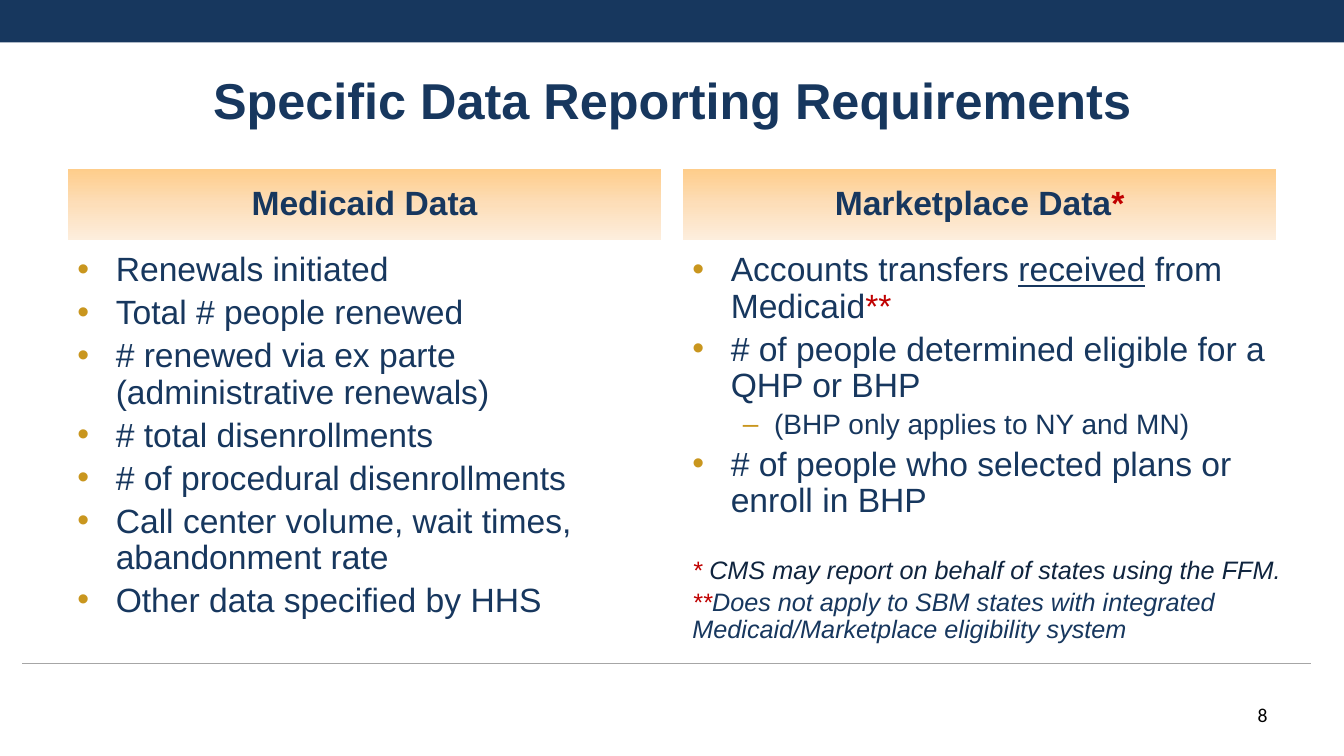
from copy import deepcopy

from lxml.etree import SubElement
from pptx import Presentation
from pptx.dml.color import RGBColor
from pptx.enum.shapes import MSO_CONNECTOR, MSO_SHAPE
from pptx.enum.text import MSO_ANCHOR, MSO_AUTO_SIZE, PP_ALIGN
from pptx.oxml.ns import qn
from pptx.util import Inches, Pt

NAVY, INK, RED, GOLD = "17375E", "0F243E", "C00000", "C9961E"
HEADER_STOPS = [(0, "FECD8B"), (0.5, "FDDEB9"), (1, "FDEEDD")]
# Per level: bullet character, left margin, hanging indent, text size
LEVELS = [("•", 0.38, 0.38, 24), ("–", 0.81, 0.31, 20)]


def rgb(value):
    return RGBColor.from_string(value)


class SlideBuilder:
    def __init__(self, slide, font="Arial"):
        self.slide = slide
        self.font = font

    def frame(self, sp, anchor=MSO_ANCHOR.TOP):
        tf = sp.text_frame
        tf.word_wrap = True
        tf.auto_size = MSO_AUTO_SIZE.NONE
        tf.vertical_anchor = anchor
        return tf

    def runs(self, p, parts, size, font=None, color=NAVY, **style):
        """Add runs; a part is plain text or (text, overrides)."""
        for part in parts:
            text, extra = (part, {}) if isinstance(part, str) else part
            look = {"color": color, **style, **extra}
            r = p.add_run()
            r.text = text
            r.font.name = font or self.font
            r.font.size = Pt(size)
            r.font.color.rgb = rgb(look.pop("color"))
            for name, value in look.items():
                setattr(r.font, name, value)

    def title(self, text, *box):
        sp = self.slide.shapes.title
        sp.left, sp.top, sp.width, sp.height = map(Inches, box)
        p = self.frame(sp, MSO_ANCHOR.MIDDLE).paragraphs[0]
        p.alignment = PP_ALIGN.CENTER
        self.runs(p, [text], 36, bold=True)

    def rect(self, *box, color=None):
        sp = self.slide.shapes.add_shape(MSO_SHAPE.RECTANGLE, *map(Inches, box))
        sp.shadow.inherit = False
        sp.line.fill.background()
        if color:
            sp.fill.solid()
            sp.fill.fore_color.rgb = rgb(color)
        return sp

    def header(self, parts, *box):
        sp = self.rect(*box)
        sp.fill.gradient()
        sp.fill.gradient_angle = 270
        stops = sp._element.spPr.find(".//" + qn("a:gsLst"))
        stops.append(deepcopy(stops[0]))
        for stop, (position, color) in zip(sp.fill.gradient_stops, HEADER_STOPS):
            stop.position = position
            stop.color.rgb = rgb(color)
        p = self.frame(sp, MSO_ANCHOR.MIDDLE).paragraphs[0]
        p.alignment = PP_ALIGN.CENTER
        p.line_spacing = 0.9
        self.runs(p, parts, 24, bold=True)

    def line(self, x1, y1, x2, y2, color, width):
        cxn = self.slide.shapes.add_connector(
            MSO_CONNECTOR.STRAIGHT, *map(Inches, (x1, y1, x2, y2)))
        cxn.line.color.rgb = rgb(color)
        cxn.line.width = Pt(width)
        SubElement(cxn._element.spPr, qn("a:effectLst"))

    def text_box(self, *box):
        return self.frame(self.slide.shapes.add_textbox(*map(Inches, box)))

    def paragraph(self, tf, before):
        p = tf.paragraphs[0]
        if p.runs:
            p = tf.add_paragraph()
            p.space_before = Pt(before)
        p.line_spacing = 0.9
        return p

    def bullets(self, tf, items):
        """Each item is (level, parts)."""
        for level, parts in items:
            char, margin, hang, size = LEVELS[level]
            p = self.paragraph(tf, size * 0.2)
            p.level = level
            pPr = p._p.get_or_add_pPr()
            pPr.set("marL", str(Inches(margin)))
            pPr.set("indent", str(-Inches(hang)))
            SubElement(SubElement(pPr, qn("a:buClr")), qn("a:srgbClr"), val=GOLD)
            SubElement(pPr, qn("a:buFont"), typeface="Arial")
            SubElement(pPr, qn("a:buChar"), char=char)
            self.runs(p, parts, size)

    def notes(self, tf, items, gap):
        """Footnotes below a list, the first set off by a gap."""
        for i, parts in enumerate(items):
            p = self.paragraph(tf, 3.6 if i else gap)
            self.runs(p, parts, 18, italic=True)


def main():
    prs = Presentation()
    prs.slide_width, prs.slide_height = Inches(13.33), Inches(7.5)
    s = SlideBuilder(prs.slides.add_slide(prs.slide_layouts[5]))

    # Frame and title
    s.rect(0, 0, 13.33, 0.42, color=NAVY)
    s.line(0.22, 6.58, 13, 6.58, "A6A6A6", 0.75)
    s.title("Specific Data Reporting Requirements", 0.67, 0.42, 12, 1.13)

    # Column headers
    left, right = 0.67, 6.77
    red = {"color": RED}
    s.header(["Medicaid Data"], left, 1.68, 5.89, 0.7)
    s.header(["Marketplace Data", ("*", red)], right, 1.68, 5.89, 0.7)

    # Medicaid column
    medicaid = [
        "Renewals initiated",
        "Total # people renewed",
        "# renewed via ex parte (administrative renewals)",
        "# total disenrollments",
        "# of procedural disenrollments",
        "Call center volume, wait times, abandonment rate",
        "Other data specified by HHS",
    ]
    s.bullets(s.text_box(left, 2.46, 5.89, 4.04), [(0, [t]) for t in medicaid])

    # Marketplace column and footnotes
    tf = s.text_box(right, 2.46, 6.06, 4.29)
    s.bullets(tf, [
        (0, ["Accounts transfers ", ("received", {"underline": True}),
             " from Medicaid", ("**", red)]),
        (0, ["# of people determined eligible for a QHP or BHP"]),
        (1, ["(BHP only applies to NY and MN)"]),
        (0, ["# of people who selected plans or enroll in BHP"]),
    ])
    s.notes(tf, [
        [("* ", red),
         ("CMS may report on behalf of states using the FFM.", {"color": INK})],
        [("**", red), "Does not apply to SBM states with integrated "
                      "Medicaid/Marketplace eligibility system"],
    ], gap=27)

    # Slide number
    p = s.text_box(11.67, 6.92, 1, 0.4).paragraphs[0]
    p.alignment = PP_ALIGN.RIGHT
    s.runs(p, ["8"], 14, font="Calibri", color="000000")

    prs.save("out.pptx")


if __name__ == "__main__":
    main()
